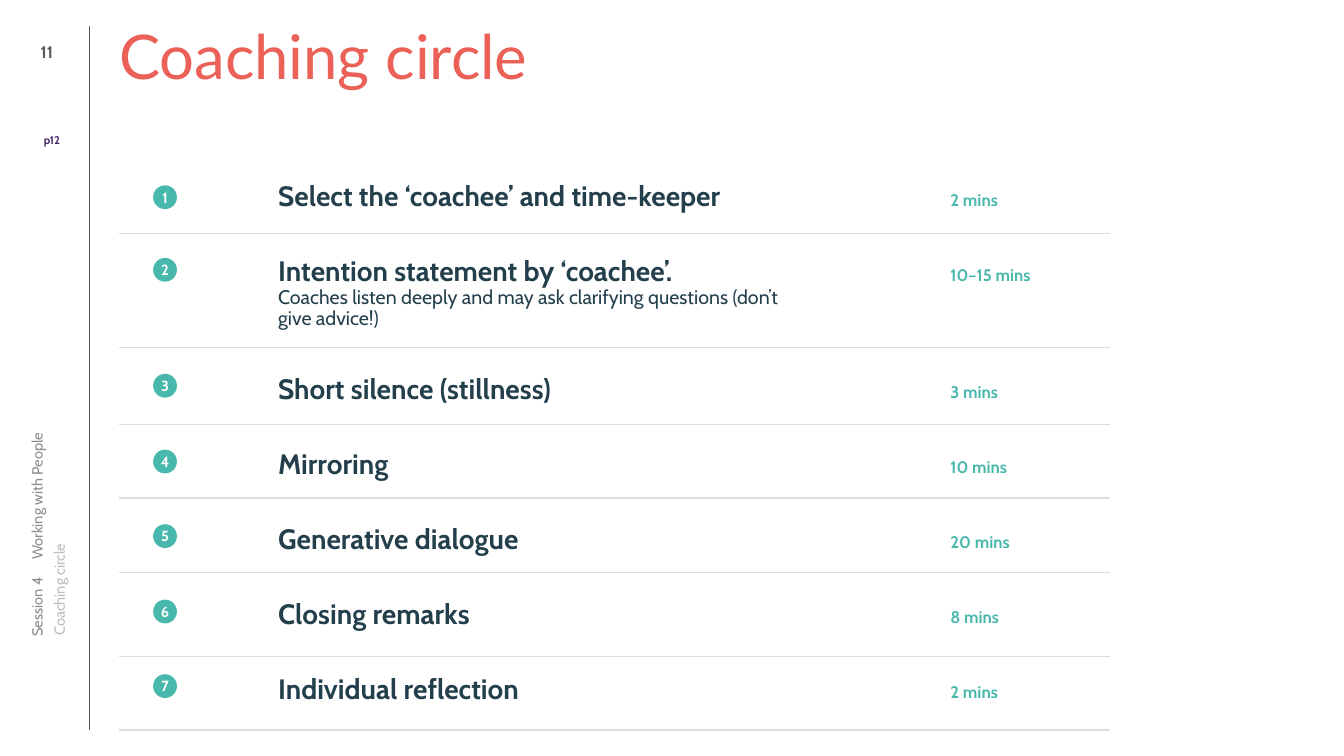
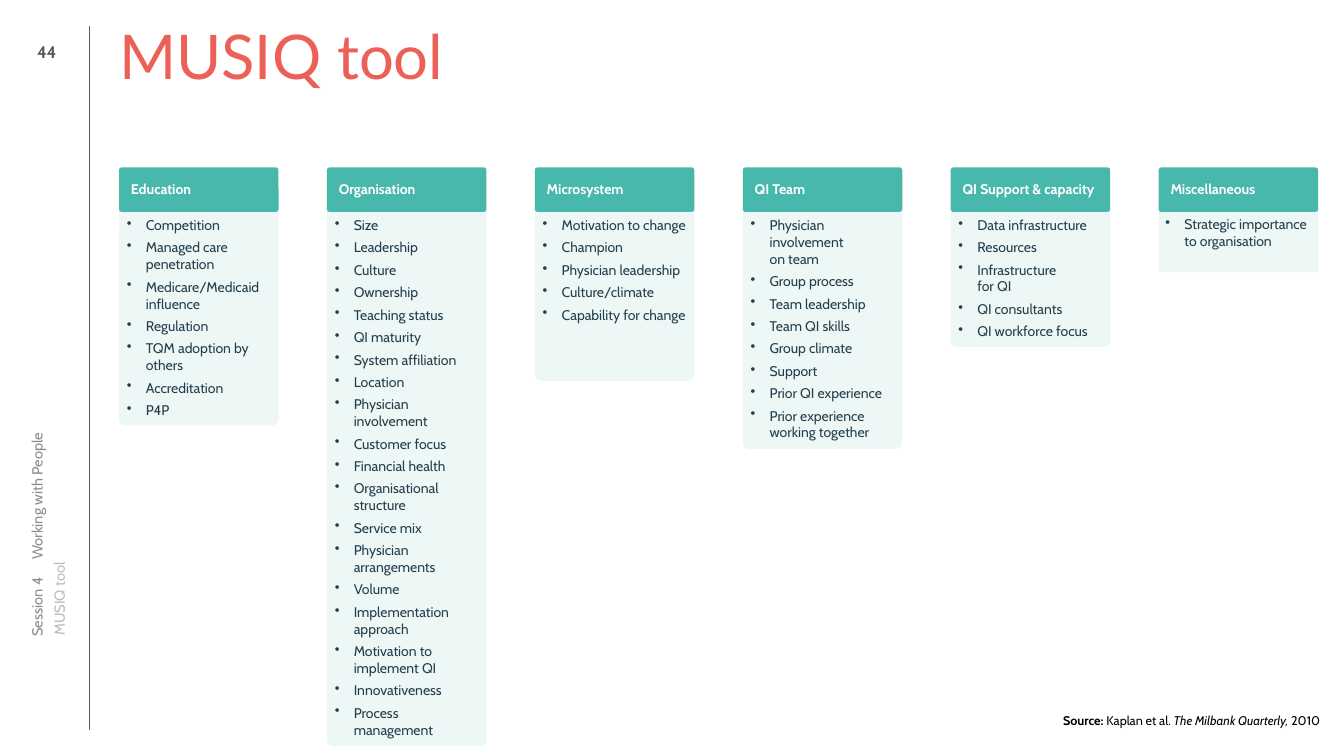
from dataclasses import dataclass

from lxml import etree
from pptx import Presentation
from pptx.dml.color import RGBColor
from pptx.enum.shapes import MSO_CONNECTOR, MSO_SHAPE
from pptx.enum.text import MSO_ANCHOR, PP_ALIGN
from pptx.oxml.ns import qn
from pptx.util import Cm, Pt

STRAIGHT = MSO_CONNECTOR.STRAIGHT
OVAL, ROUND = MSO_SHAPE.OVAL, MSO_SHAPE.ROUNDED_RECTANGLE
TOP, MIDDLE = MSO_ANCHOR.TOP, MSO_ANCHOR.MIDDLE
LEFT, CENTER, RIGHT = PP_ALIGN.LEFT, PP_ALIGN.CENTER, PP_ALIGN.RIGHT


@dataclass(frozen=True)
class Style:
    size: float
    color: str
    bold: bool = False
    font: str = "Cabin"
    align: PP_ALIGN = LEFT
    lead: object = None
    after: float = 0


@dataclass(frozen=True)
class Theme:
    teal: str = "49B8AC"
    mint: str = "DBF1EE"
    grey: str = "5C5753"
    rule: str = "DFDDDC"
    title: Style = Style(44, "EB6057", font="Lato", lead=0.9)
    page: Style = Style(12, "5C5753", True, align=CENTER)
    ref: Style = Style(8, "412669", True, align=CENTER)
    session: Style = Style(10.5, "8C8C8C")
    topic: Style = Style(10.5, "BFBCB9", lead=0.9)
    dot: Style = Style(10.5, "FFFFFF", True, align=CENTER)
    step: Style = Style(20, "243F4C", True, lead=0.9, after=32)
    time: Style = Style(12, "49B8AC", True, lead=Pt(21.6), after=32)
    head: Style = Style(10, "FFFFFF", True, lead=0.9)
    item: Style = Style(10, "243F4C", after=4)
    source: Style = Style(9, "000000", align=RIGHT)
    note: float = 14


THEME = Theme()
EDGE = 3.0
FOOT = 18.39

STEPS = [
    ("Select the ‘coachee’ and time-keeper", "", "2 mins", 4.67, 5.89),
    ("Intention statement by ‘coachee’.",
     "Coaches listen deeply and may ask clarifying questions (don’t give advice!)",
     "10–15 mins", 6.5, 8.76),
    ("Short silence (stillness)", "", "3 mins", 9.42, 10.69),
    ("Mirroring", "", "10 mins", 11.33, 12.55),
    ("Generative dialogue", "", "20 mins", 13.21, 14.43),
    ("Closing remarks", "", "8 mins", 15.11, 16.54),
    ("Individual reflection", "", "2 mins", 16.99, FOOT),
]

GROUPS = [
    ("Education", 5.56, [
        "Competition", "Managed care penetration", "Medicare/Medicaid influence",
        "Regulation", "TQM adoption by others", "Accreditation", "P4P"]),
    ("Organisation", 13.64, [
        "Size", "Leadership", "Culture", "Ownership", "Teaching status",
        "QI maturity", "System affiliation", "Location", "Physician involvement",
        "Customer focus", "Financial health", "Organisational structure",
        "Service mix", "Physician arrangements", "Volume",
        "Implementation approach", "Motivation to implement QI",
        "Innovativeness", "Process management"]),
    ("Microsystem", 5.44 - 1, [
        "Motivation to change", "Champion", "Physician leadership",
        "Culture/climate", "Capability for change"]),
    ("QI Team", 6.15, [
        "Physician involvement\von team", "Group process", "Team leadership",
        "Team QI skills", "Group climate", "Support", "Prior QI experience",
        "Prior experience working together"]),
    ("QI Support & capacity", 3.58, [
        "Data infrastructure", "Resources", "Infrastructure\vfor QI",
        "QI consultants", "QI workforce focus"]),
    ("Miscellaneous", 1.7, ["Strategic importance to organisation"]),
]


def dress(para, style):
    para.alignment = style.align
    if style.lead:
        para.line_spacing = style.lead
    if style.after:
        para.space_after = Pt(style.after)
    font = para.font
    font.name, font.size, font.bold = style.font, Pt(style.size), style.bold
    font.color.rgb = RGBColor.from_string(style.color)


def bullet(para):
    props = para._p.get_or_add_pPr()
    props.set("marL", str(Cm(0.48)))
    props.set("indent", str(-Cm(0.48)))
    etree.SubElement(props, qn("a:buChar")).set("char", "•")


def tab(para, place):
    tabs = etree.SubElement(para._p.get_or_add_pPr(), qn("a:tabLst"))
    stop = etree.SubElement(tabs, qn("a:tab"))
    stop.set("pos", str(Cm(place)))
    stop.set("algn", "l")


def setup(frame, anchor=TOP, inset=(0, 0, 0, 0), wrap=True):
    frame.word_wrap = wrap
    frame.vertical_anchor = anchor
    (frame.margin_left, frame.margin_top,
     frame.margin_right, frame.margin_bottom) = map(Cm, inset)


def paras(frame, count):
    return [frame.paragraphs[0]] + [frame.add_paragraph() for _ in range(count - 1)]


def fill_text(frame, lines, style, bullets=False):
    made = paras(frame, len(lines))
    for para, line in zip(made, lines):
        para.text = line
        if bullets:
            bullet(para)
        dress(para, style)
    return made


def add_box(slide, x, y, w, h, anchor=TOP, turn=0):
    box = slide.shapes.add_textbox(Cm(x), Cm(y), Cm(w), Cm(h))
    box.rotation = turn
    setup(box.text_frame, anchor)
    return box.text_frame


def add_label(slide, text, style, *place, **more):
    return fill_text(add_box(slide, *place, **more), [text], style)


def add_panel(slide, kind, x, y, w, h, color, alpha=None, curve=None):
    panel = slide.shapes.add_shape(kind, Cm(x), Cm(y), Cm(w), Cm(h))
    panel.shadow.inherit = False
    panel.line.fill.background()
    panel.fill.solid()
    panel.fill.fore_color.rgb = RGBColor.from_string(color)
    if alpha:
        tint = panel._element.spPr.find(qn("a:solidFill"))[0]
        etree.SubElement(tint, qn("a:alpha")).set("val", str(alpha * 1000))
    if curve:
        panel.adjustments[0] = curve
    return panel.text_frame


def add_rule(slide, x1, y1, x2, y2, color, width):
    rule = slide.shapes.add_connector(STRAIGHT, Cm(x1), Cm(y1), Cm(x2), Cm(y2))
    rule.line.color.rgb = RGBColor.from_string(color)
    rule.line.width = Pt(width)
    etree.SubElement(rule._element.spPr, qn("a:effectLst"))


def new_slide(deck, title, page):
    slide = deck.slides.add_slide(deck.slide_layouts[6])
    add_rule(slide, 2.26, FOOT, 2.26, 0.66, THEME.grey, 0.25)
    add_label(slide, title, THEME.title, EDGE, 0.66, 30.2, 3.18)
    session = add_box(slide, -4.98, 9.88, 11.81, 0.51, MIDDLE, 270)
    session.text = "Session 4\tWorking with People"
    tab(session.paragraphs[0], 1.93)
    dress(session.paragraphs[0], THEME.session)
    add_label(slide, page, THEME.page, 0.66, 0.66, 1.04, 1.3, anchor=MIDDLE)
    add_label(slide, title, THEME.topic, -4.39, 9.93, 11.79, 0.38, turn=270)
    return slide


def add_steps(slide):
    names = add_box(slide, 7.01, 4.6, 13.56, 13.59)
    for para, (name, note, *_) in zip(paras(names, len(STEPS)), STEPS):
        para.text = name
        dress(para, THEME.step)
        if note:
            para.add_line_break()
            run = para.add_run()
            run.text = note
            run.font.size, run.font.bold = Pt(THEME.note), False
    times = add_box(slide, 23.95, 4.53, 5.23, 13.59)
    made = fill_text(times, [step[2] for step in STEPS], THEME.time)
    made[1].space_after = Pt(62)
    for number, (*_, top, base) in enumerate(STEPS, 1):
        dot = add_panel(slide, OVAL, 3.86, top, 0.6, 0.6, THEME.teal)
        setup(dot, MIDDLE, wrap=False)
        fill_text(dot, [str(number)], THEME.dot)
        add_rule(slide, 27.97, base, EDGE, base, THEME.rule, 1)


def add_group(slide, x, head, height, items):
    body = add_panel(slide, ROUND, x, 5.16, 4.02, height, THEME.mint, 50, 0.04)
    setup(body, TOP, (0.15, 0.25, 0.1, 0.13))
    fill_text(body, items, THEME.item, bullets=True)
    cap = add_panel(slide, ROUND, x, 4.22, 4.02, 1.12, THEME.teal, curve=0.06)
    setup(cap, MIDDLE, (0.28, 0, 0.25, 0))
    fill_text(cap, [head], THEME.head)


def add_source(slide):
    para = add_box(slide, 20, 17.83, 13.27, 0.64, MIDDLE).paragraphs[0]
    dress(para, THEME.source)
    for text, bold, slant in [("Source:", True, False),
                              (" Kaplan et al. ", False, False),
                              ("The Milbank Quarterly, ", False, True),
                              ("2010", False, False)]:
        run = para.add_run()
        run.text = text
        run.font.bold, run.font.italic = bold, slant


def main():
    deck = Presentation()
    deck.slide_width, deck.slide_height = Cm(33.87), Cm(19.05)

    circle = new_slide(deck, "Coaching circle", "11")
    add_label(circle, "p12", THEME.ref, 0.66, 3.23, 1.3, 0.61, anchor=MIDDLE)
    add_steps(circle)

    tool = new_slide(deck, "MUSIQ tool", "44")
    for column, group in enumerate(GROUPS):
        add_group(tool, EDGE + 5.24 * column, *group)
    add_source(tool)

    deck.save("out.pptx")


if __name__ == "__main__":
    main()
